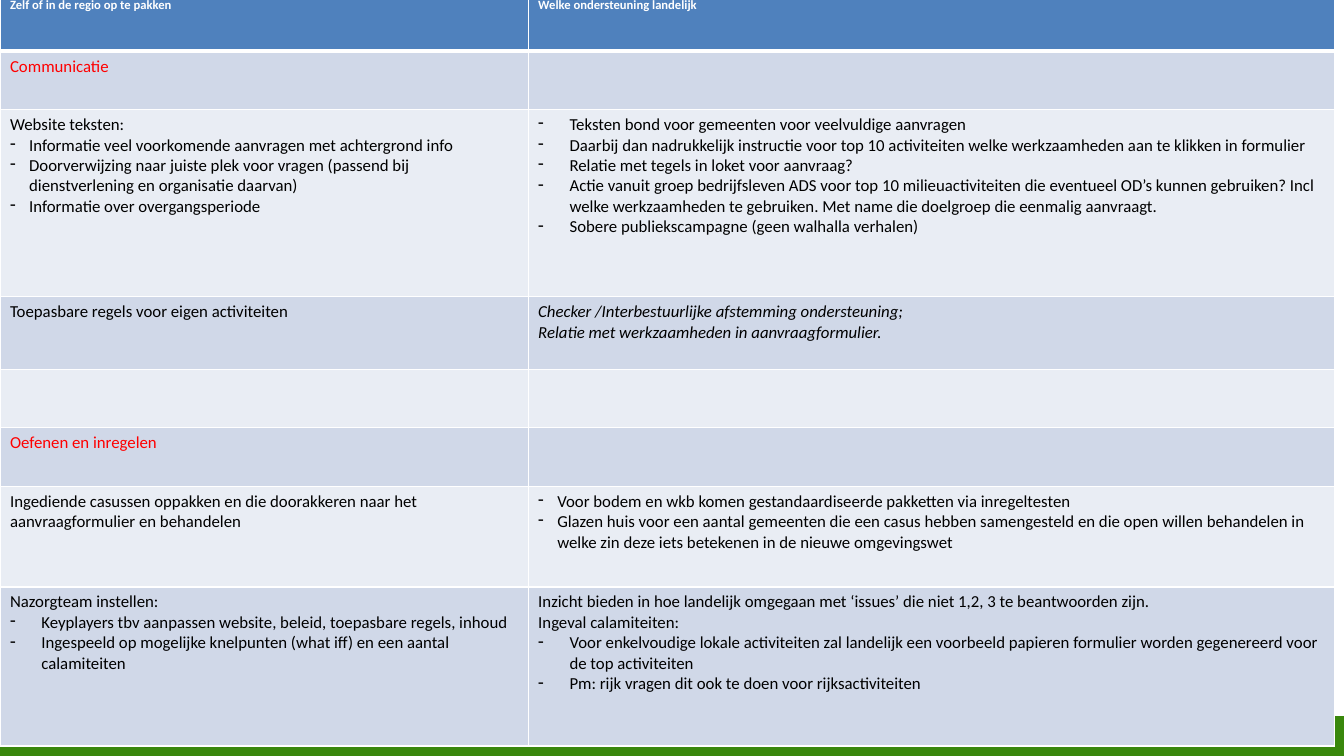
from lxml.etree import SubElement
from pptx import Presentation
from pptx.dml.color import RGBColor
from pptx.enum.shapes import MSO_SHAPE
from pptx.oxml.ns import qn
from pptx.util import Cm, Pt

THEME = {
    "font": "Calibri", "head_size": 9, "body_size": 12,
    "text": "000000", "accent": "FF0000", "white": "FFFFFF",
    "head": "4F81BD", "bands": ("E9EDF4", "D0D8E8"), "bar": "39870C",
}
SMALL, WIDE = {"indent": 0.48}, {"indent": 0.79}
HEAD = {"size": THEME["head_size"], "color": THEME["white"], "bold": True}
TOPIC = {"color": THEME["accent"]}
ITALIC = {"italic": True}

ROWS = [
    (1.47,
     [("Zelf of in de regio op te pakken", HEAD)],
     [("Welke ondersteuning landelijk", HEAD)]),
    (1.47, [("Communicatie", TOPIC)], []),
    (4.72,
     [("Website teksten:", {}),
      ("Informatie veel voorkomende aanvragen met achtergrond info", SMALL),
      ("Doorverwijzing naar juiste plek voor vragen (passend bij dienstverlening en organisatie daarvan)", SMALL),
      ("Informatie over overgangsperiode", SMALL)],
     [("Teksten bond voor gemeenten voor veelvuldige aanvragen", WIDE),
      ("Daarbij dan nadrukkelijk instructie voor top 10 activiteiten welke werkzaamheden aan te klikken in formulier", WIDE),
      ("Relatie met tegels in loket voor aanvraag?", WIDE),
      ("Actie vanuit groep bedrijfsleven ADS voor top 10 milieuactiviteiten die eventueel OD’s kunnen gebruiken? "
       "Incl welke werkzaamheden te gebruiken. Met name die doelgroep die eenmalig aanvraagt.", WIDE),
      ("Sobere publiekscampagne (geen walhalla verhalen)", WIDE)]),
    (1.83,
     [("Toepasbare regels voor eigen activiteiten", {})],
     [("Checker /Interbestuurlijke afstemming ondersteuning;", ITALIC),
      ("Relatie met werkzaamheden in aanvraagformulier.", ITALIC)]),
    (1.47, [], []),
    (1.47, [("Oefenen en inregelen", TOPIC)], []),
    (2.54,
     [("Ingediende casussen oppakken en die doorakkeren naar het aanvraagformulier en behandelen", {})],
     [("Voor bodem en wkb komen gestandaardiseerde pakketten via inregeltesten", SMALL),
      ("Glazen huis voor een aantal gemeenten die een casus hebben samengesteld en die open willen behandelen "
       "in welke zin deze iets betekenen in de nieuwe omgevingswet", SMALL)]),
    (4.01,
     [("Nazorgteam instellen:", {}),
      ("Keyplayers tbv aanpassen website, beleid, toepasbare regels, inhoud", WIDE),
      ("Ingespeeld op mogelijke knelpunten (what iff) en een aantal calamiteiten", WIDE)],
     [("Inzicht bieden in hoe landelijk omgegaan met ‘issues’ die niet 1,2, 3 te beantwoorden zijn.", {}),
      ("Ingeval calamiteiten:", {}),
      ("Voor enkelvoudige lokale activiteiten zal landelijk een voorbeeld papieren formulier worden "
       "gegenereerd voor de top activiteiten", WIDE),
      ("Pm: rijk vragen dit ook te doen voor rijksactiviteiten", WIDE)]),
]
COLS = (13.31, 20.32)
SLIDE_W, SLIDE_H = 33.87, 19.05
TABLE_TOP, BAR_TOP, BAR_H = -0.18, 18.08, 0.98


def rgb(name):
    return RGBColor.from_string(name)


def add_text(p, text, size=THEME["body_size"], color=THEME["text"], bold=False, italic=False, indent=0):
    r = p.add_run()
    r.text = text
    f = r.font
    f.name, f.size, f.bold, f.italic = THEME["font"], Pt(size), bold, italic
    f.color.rgb = rgb(color)
    if indent:
        pPr = p._p.get_or_add_pPr()
        pPr.set("marL", str(Cm(indent)))
        pPr.set("indent", str(-Cm(indent)))
        SubElement(pPr, qn("a:buFontTx"))
        SubElement(pPr, qn("a:buChar"), char="-")


def set_borders(cell, top=1, bottom=1):
    tcPr = cell._tc.get_or_add_tcPr()
    for side, width in (("L", 1), ("R", 1), ("T", top), ("B", bottom)):
        ln = SubElement(tcPr, qn(f"a:ln{side}"), w=str(Pt(width)))
        fill = SubElement(ln, qn("a:solidFill"))
        SubElement(fill, qn("a:srgbClr"), val=THEME["white"])


def add_bar(s):
    sp = s.shapes.add_shape(MSO_SHAPE.RECTANGLE, 0, Cm(BAR_TOP), Cm(SLIDE_W), Cm(BAR_H))
    sp.shadow.inherit = False
    sp.fill.solid()
    sp.fill.fore_color.rgb = rgb(THEME["bar"])
    sp.line.color.rgb = rgb(THEME["bar"])
    sp.line.width = Pt(2)


def add_actions_table(s):
    height = sum(row[0] for row in ROWS)
    table = s.shapes.add_table(len(ROWS), len(COLS), 0, Cm(TABLE_TOP), Cm(sum(COLS)), Cm(height)).table
    for col, width in zip(table.columns, COLS):
        col.width = Cm(width)
    for i, (row_h, *cells) in enumerate(ROWS):
        table.rows[i].height = Cm(row_h)
        for j, paragraphs in enumerate(cells):
            cell = table.cell(i, j)
            set_borders(cell, top=3 if i == 1 else 1, bottom=3 if i == 0 else 1)
            cell.fill.solid()
            cell.fill.fore_color.rgb = rgb(THEME["bands"][i % 2] if i else THEME["head"])
            tf = cell.text_frame
            for k, (text, style) in enumerate(paragraphs):
                p = tf.add_paragraph() if k else tf.paragraphs[0]
                add_text(p, text, **style)


def main():
    prs = Presentation()
    prs.slide_width, prs.slide_height = Cm(SLIDE_W), Cm(SLIDE_H)
    s = prs.slides.add_slide(prs.slide_layouts[6])
    add_bar(s)
    add_actions_table(s)
    prs.save("out.pptx")


if __name__ == "__main__":
    main()
